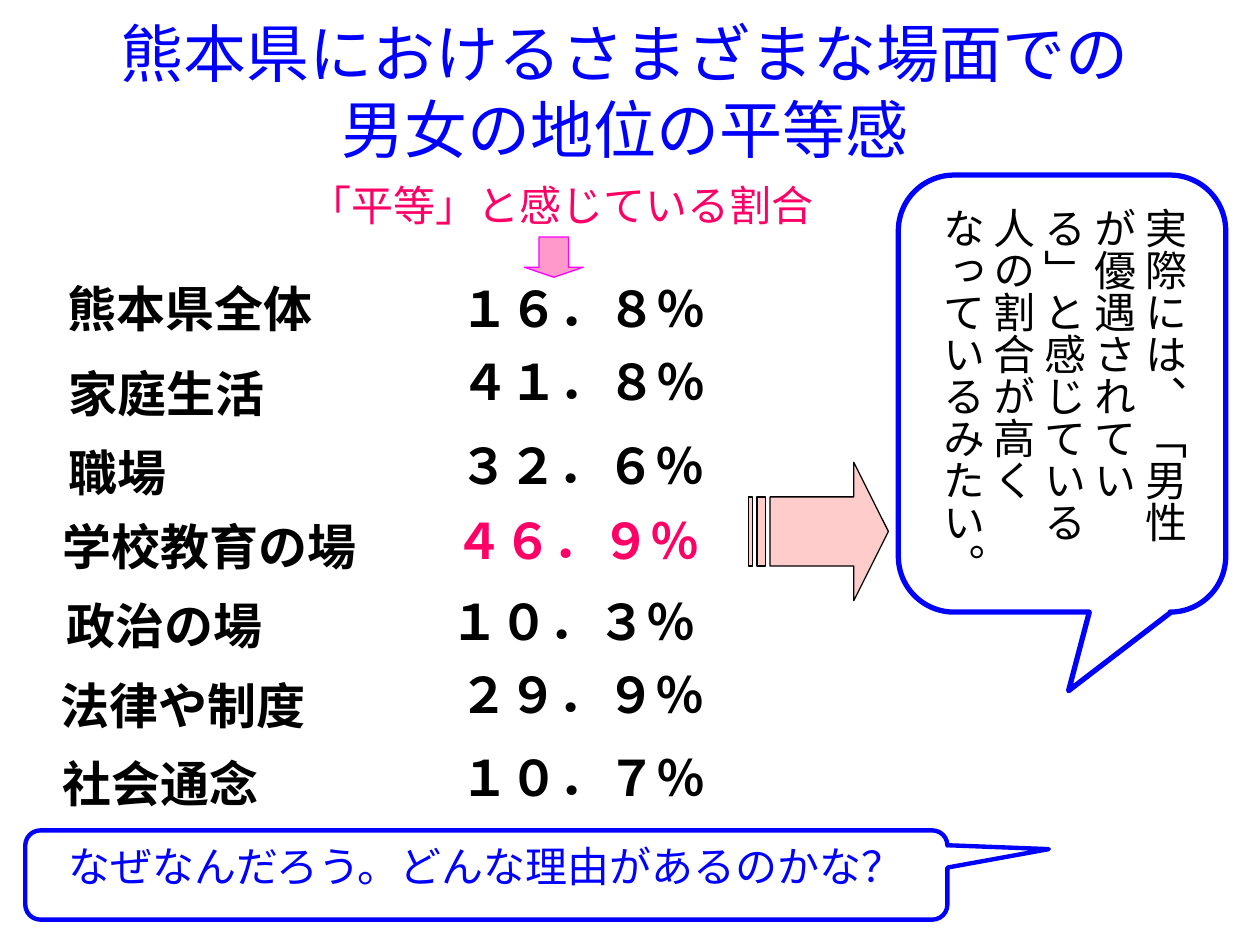
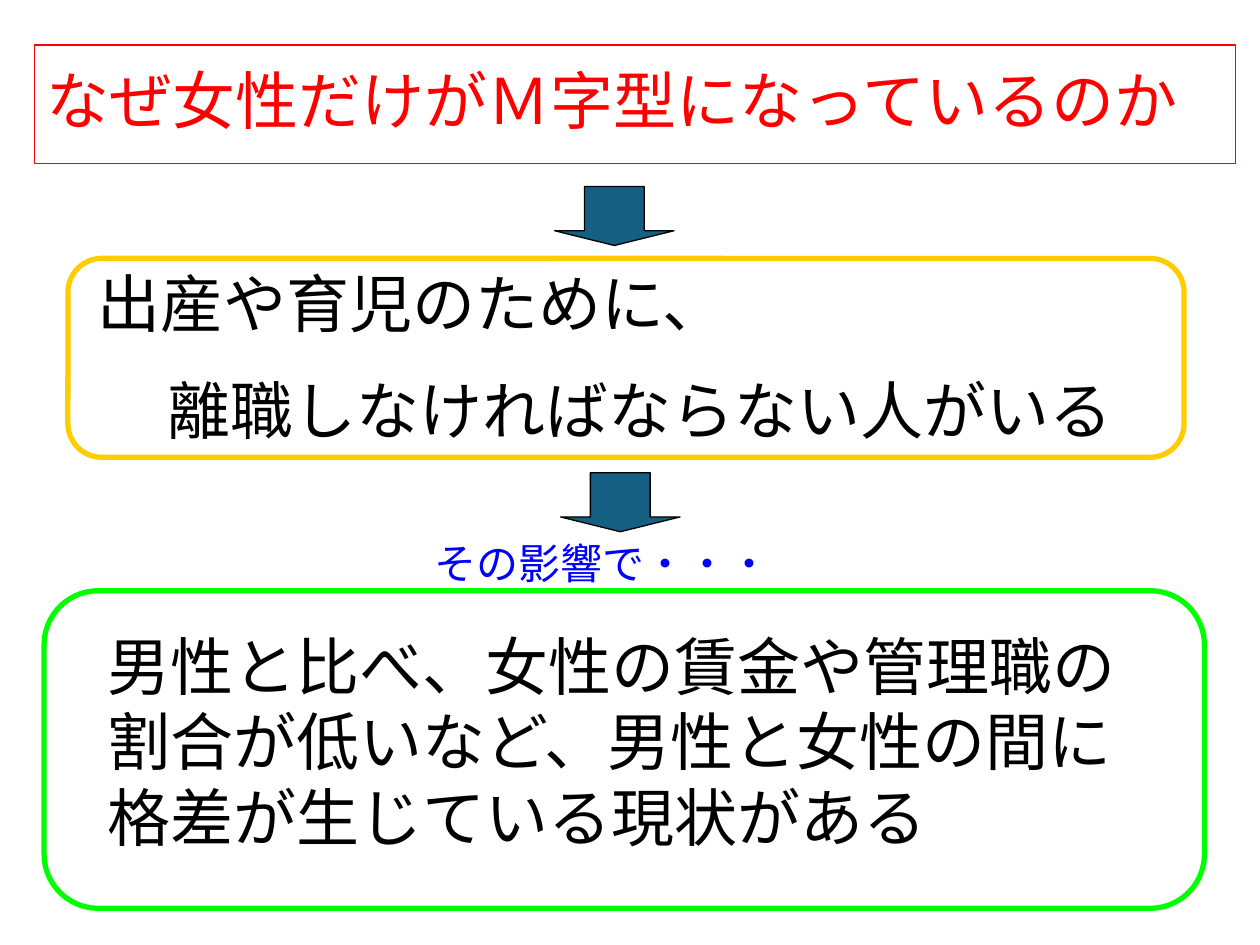
"""Build two slides on how equal women and men feel their standing to be."""
from dataclasses import dataclass, field
from typing import Any, NamedTuple, Optional

from pptx import Presentation
from pptx.dml.color import RGBColor
from pptx.enum.shapes import MSO_SHAPE
from pptx.enum.text import MSO_ANCHOR, MSO_AUTO_SIZE, PP_ALIGN
from pptx.oxml.ns import qn
from pptx.slide import Slide
from pptx.util import Cm, Pt


@dataclass(frozen=True)
class Theme:
    """Hold the colours, fonts and type sizes."""
    ink: str = "000000"
    blue: str = "0000FF"
    rose: str = "FF0066"
    red: str = "FF0000"
    pink: str = "FF99CC"
    magenta: str = "FF00FF"
    blush: str = "FFCCCC"
    gold: str = "FFCC00"
    green: str = "00FF00"
    teal: str = "156082"
    body_font: str = "Arial"
    figure_font: str = "Noto Sans CJK JP"
    question_font: str = "Cabin"
    heading: int = 36
    row: int = 28
    note: int = 24
    hairline: float = 0.75


THEME = Theme()


class Box(NamedTuple):
    """Give a place in centimetres."""
    left: float
    top: float
    width: float
    height: float


@dataclass(frozen=True)
class Words:
    """Describe the text of one part."""
    lines: tuple[str, ...]
    size: int = THEME.note
    color: str = THEME.ink
    font: str = THEME.body_font
    bold: bool = False
    indents: tuple[float, ...] = ()
    paragraph: dict[str, Any] = field(default_factory=dict)
    frame: dict[str, Any] = field(default_factory=dict)
    vertical: bool = False


@dataclass(frozen=True)
class Figure:
    """Describe one preset shape."""
    kind: MSO_SHAPE
    box: Box
    adjustments: tuple[float, ...]
    line: Optional[str] = None
    weight: float = THEME.hairline
    fill: Optional[str] = None
    words: Optional[Words] = None


class Share(NamedTuple):
    """Pair a setting with its share of people who feel equal."""
    setting: str
    setting_at: tuple[float, float, float]
    percent: str
    percent_at: tuple[float, float, float]
    color: str = THEME.ink


CENTERED = {"alignment": PP_ALIGN.CENTER}
ROW_HEIGHT = 1.45
CORNER = 0.17
CALLOUT = MSO_SHAPE.ROUNDED_RECTANGULAR_CALLOUT

SHARES = (
    Share("熊本県全体", (1.12, 5.49, 5.99), "１６．８％", (9.04, 5.49, 6.1)),
    Share("家庭生活", (1.14, 7.21, 4.8), "４１．８％", (9.04, 6.96, 5.79)),
    Share("職場", (1.14, 8.79, 4.8), "３２．６％", (9.02, 8.66, 5.99)),
    Share("学校教育の場", (1.02, 10.29, 7.01), "４６．９％", (8.92, 10.16, 5.79), THEME.rose),
    Share("政治の場", (1.09, 11.89, 4.8), "１０．３％", (8.84, 11.79, 5.97)),
    Share("法律や制度", (0.97, 13.49, 5.99), "２９．９％", (9.02, 13.28, 6.1)),
    Share("社会通念", (1.02, 15.06, 8.31), "１０．７％", (9.04, 14.94, 6.48)),
)

EQUALITY_FIGURES = (
    Figure(CALLOUT, Box(5.41, 3.43, 11.81, 1.19), (-0.02, 1.2, CORNER),
           words=Words(("「平等」と感じている割合",), color=THEME.rose, paragraph=CENTERED)),
    Figure(MSO_SHAPE.STRIPED_RIGHT_ARROW, Box(15.09, 9.32, 2.82, 2.79), (0.5, 0.25),
           THEME.ink, fill=THEME.blush),
    Figure(CALLOUT, Box(0.51, 16.74, 18.59, 1.8), (0.61, -0.29, CORNER), THEME.blue, 2.5,
           words=Words(("なぜなんだろう。どんな理由があるのかな？",),
                       color=THEME.blue, paragraph=CENTERED)),
    Figure(CALLOUT, Box(18.11, 3.53, 6.6, 8.81), (0.02, 0.68, CORNER), THEME.blue, 3),
    Figure(MSO_SHAPE.DOWN_ARROW, Box(10.57, 4.78, 1.19, 0.81), (0.5, 0.25),
           THEME.magenta, fill=THEME.pink),
)

CAREER_FIGURES = (
    Figure(MSO_SHAPE.ROUNDED_RECTANGLE, Box(1.37, 5.21, 22.5, 4.01), (CORNER,), THEME.gold, 3),
    Figure(MSO_SHAPE.ROUNDED_RECTANGLE, Box(0.89, 11.91, 23.39, 6.4), (CORNER,), THEME.green, 3),
    *(Figure(MSO_SHAPE.DOWN_ARROW, Box(left, top, 2.41, 1.19), (0.5, 0.25),
             THEME.ink, fill=THEME.teal)
      for left, top in ((11.18, 3.76), (11.3, 9.53))),
)


def apply_format(target: Any, values: dict[str, Any]) -> None:
    """Set each named attribute on the target."""
    for attribute, value in values.items():
        setattr(target, attribute, value)


def place(shape: Any, box: Box) -> None:
    """Move and size a shape."""
    apply_format(shape, {side: Cm(length) for side, length in box._asdict().items()})


def paint_line(shape: Any, color: Optional[str], weight: float) -> None:
    """Outline a shape, or leave it without an outline."""
    if color is None:
        shape.line.fill.background()
        return
    shape.line.color.rgb = RGBColor.from_string(color)
    shape.line.width = Pt(weight)


def write(shape: Any, words: Words) -> None:
    """Write and format the text of a shape."""
    frame = shape.text_frame
    apply_format(frame, {"word_wrap": True, "auto_size": MSO_AUTO_SIZE.NONE,
                         "vertical_anchor": MSO_ANCHOR.TOP, **words.frame})
    if words.vertical:
        frame._txBody.bodyPr.set("vert", "eaVert")
    for index, line in enumerate(words.lines):
        paragraph = frame.add_paragraph() if index else frame.paragraphs[0]
        paragraph.text = line
        apply_format(paragraph, {"alignment": PP_ALIGN.LEFT,
                                 "space_before": Pt(words.size / 2 if index else 0),
                                 **words.paragraph})
        if words.indents:
            paragraph._p.get_or_add_pPr().set("marL", str(Cm(words.indents[index])))
        for run in paragraph.runs:
            apply_format(run.font, {"name": words.font, "size": Pt(words.size),
                                    "bold": words.bold})
            run.font.color.rgb = RGBColor.from_string(words.color)
            if words.font == THEME.figure_font:
                latin = run.font._element.find(qn("a:latin"))
                east_asian = latin.makeelement(qn("a:ea"), {"typeface": words.font})
                latin.addnext(east_asian)


def draw_text(slide: Slide, box: Box, words: Words) -> None:
    """Add a text box."""
    write(slide.shapes.add_textbox(*map(Cm, box)), words)


def draw_figure(slide: Slide, figure: Figure) -> None:
    """Add a preset shape with its adjustments, colours and text."""
    shape = slide.shapes.add_shape(figure.kind, *map(Cm, figure.box))
    shape.shadow.inherit = False
    for index, amount in enumerate(figure.adjustments):
        shape.adjustments[index] = amount
    if figure.fill is None:
        shape.fill.background()
    else:
        shape.fill.solid()
        shape.fill.fore_color.rgb = RGBColor.from_string(figure.fill)
    paint_line(shape, figure.line, figure.weight)
    if figure.words:
        write(shape, figure.words)


def draw_share(slide: Slide, share: Share) -> None:
    """Add one setting and its percentage."""
    draw_text(slide, Box(*share.setting_at, ROW_HEIGHT),
              Words((share.setting,), THEME.row, bold=True))
    draw_text(slide, Box(*share.percent_at, ROW_HEIGHT),
              Words((share.percent,), THEME.row, share.color, THEME.figure_font, True))


def add_titled_slide(deck: Any, box: Box, words: Words) -> Slide:
    """Add a title-only slide and format its title."""
    slide = deck.slides.add_slide(deck.slide_layouts[5])
    place(slide.shapes.title, box)
    write(slide.shapes.title, words)
    return slide


def build_equality_slide(deck: Any) -> None:
    """Show the share of people who feel equal in each setting."""
    slide = add_titled_slide(
        deck, Box(0.69, 0.53, 23.8, 2.59),
        Words(("熊本県におけるさまざまな場面での\n男女の地位の平等感",), THEME.heading, THEME.blue,
              paragraph=CENTERED, frame={"vertical_anchor": MSO_ANCHOR.MIDDLE}))
    for share in SHARES:
        draw_share(slide, share)
    draw_text(slide, Box(18.47, 3.94, 5.64, 8),
              Words(("実際には、「男性が優遇されている」と感じている人の割合が高くなっているみたい。",),
                    vertical=True))
    for figure in EQUALITY_FIGURES:
        draw_figure(slide, figure)


def build_career_slide(deck: Any) -> None:
    """Trace the M-shaped curve from its cause to its effect."""
    slide = add_titled_slide(
        deck, Box(0.69, 0.91, 24.21, 2.39),
        Words(("なぜ女性だけがＭ字型になっているのか",), THEME.heading, THEME.red,
              THEME.question_font, paragraph={"line_spacing": 0.9},
              frame={"vertical_anchor": MSO_ANCHOR.MIDDLE}))
    paint_line(slide.shapes.title, THEME.red, THEME.hairline)
    for figure in CAREER_FIGURES:
        draw_figure(slide, figure)
    draw_text(slide, Box(0.58, 5.21, 24.13, 4.06),
              Words(("出産や育児のために、", "離職しなければならない人がいる"),
                    THEME.heading, indents=(1.13, 2.54)))
    draw_text(slide, Box(8.51, 10.72, 8.2, 1.27),
              Words(("その影響で・・・",), color=THEME.blue))
    draw_text(slide, Box(1.91, 12.52, 21.41, 4.83),
              Words(("男性と比べ、女性の賃金や管理職の割合が低いなど、"
                     "男性と女性の間に格差が生じている現状がある",), THEME.heading))


def main() -> None:
    """Build and save the deck."""
    deck = Presentation()
    apply_format(deck, {"slide_width": Cm(25.4), "slide_height": Cm(19.05)})
    build_equality_slide(deck)
    build_career_slide(deck)
    deck.save("out.pptx")


if __name__ == "__main__":
    main()
